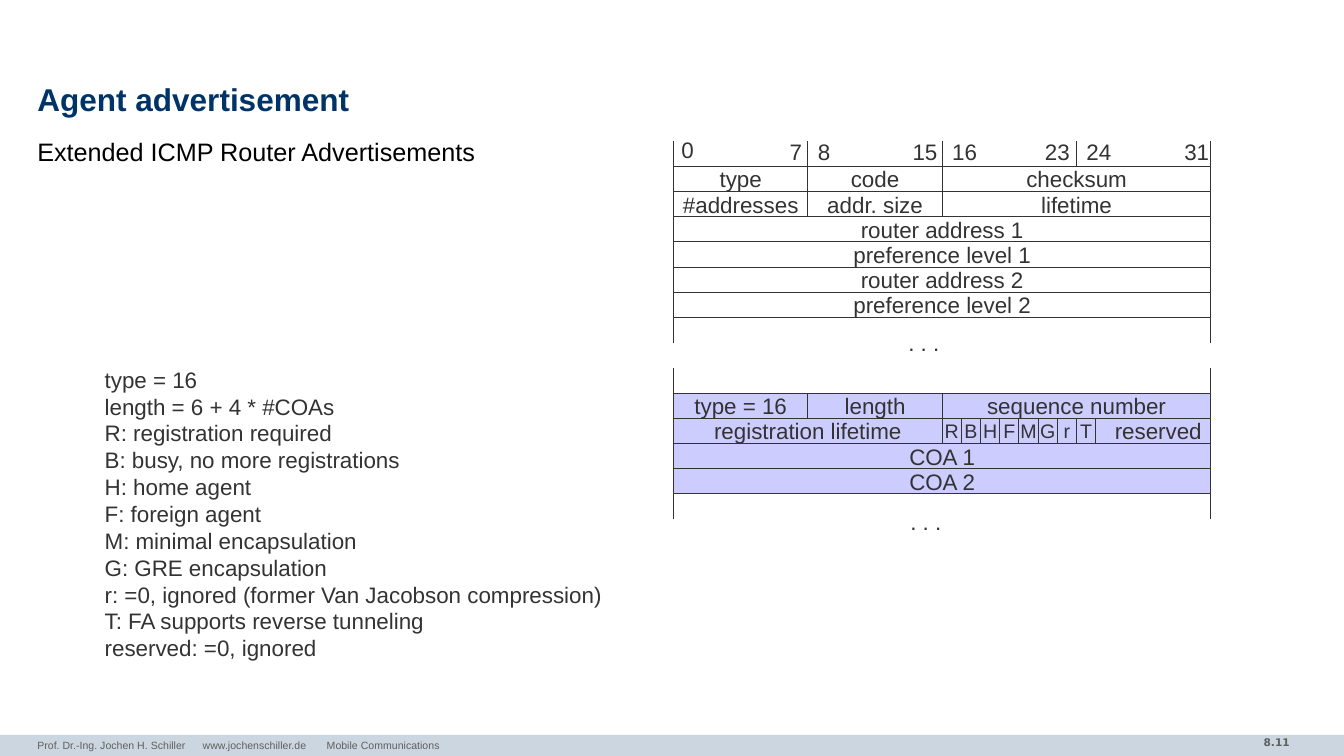
from lxml.etree import SubElement
from pptx import Presentation
from pptx.dml.color import RGBColor
from pptx.enum.shapes import MSO_CONNECTOR, MSO_SHAPE
from pptx.enum.text import MSO_ANCHOR, PP_ALIGN
from pptx.oxml.ns import qn
from pptx.util import Inches, Pt

WIDTH, HEIGHT = 13.33, 7.5
NAVY = RGBColor(0x00, 0x33, 0x66)
BLACK = RGBColor(0x00, 0x00, 0x00)
INK = RGBColor(0x33, 0x33, 0x33)
GRAY = RGBColor(0x5F, 0x5F, 0x5F)
BAND = RGBColor(0xCC, 0xD6, 0xE0)
WHITE = RGBColor(0xFF, 0xFF, 0xFF)
LILAC = RGBColor(0xCC, 0xCC, 0xFF)

TITLE = "Agent advertisement"
SUBTITLE = "Extended ICMP Router Advertisements"
FOOTER = "Prof. Dr.-Ing. Jochen H. Schiller\twww.jochenschiller.de\tMobile Communications"
FOOTER_TABS = (1.64, 2.87)
LEGEND = [
    "type = 16",
    "length = 6 + 4 * #COAs",
    "R: registration required",
    "B: busy, no more registrations",
    "H: home agent",
    "F: foreign agent",
    "M: minimal encapsulation",
    "G: GRE encapsulation",
    "r: =0, ignored (former Van Jacobson compression)",
    "T: FA supports reverse tunneling",
    "reserved: =0, ignored",
]

LEFT, TOP, BIT, ROW = 6.68, 1.4, 5.33 / 32, 0.25
FLAGS, FLAG_BITS, FLAG_ROW = "RBHFMGr", 8 / 7, 11
ROUTER_FIELDS = [
    (1, 0, 8, "type"), (1, 8, 8, "code"), (1, 16, 16, "checksum"),
    (2, 0, 8, "#addresses"), (2, 8, 8, "addr. size"), (2, 16, 16, "lifetime"),
    (3, 0, 32, "router address 1"),
    (4, 0, 32, "preference level 1"),
    (5, 0, 32, "router address 2"),
    (6, 0, 32, "preference level 2"),
]
AGENT_FIELDS = [
    (10, 0, 8, "type = 16"), (10, 8, 8, "length"), (10, 16, 16, "sequence number"),
    (FLAG_ROW, 0, 16, "registration lifetime"),
    (12, 0, 32, "COA 1"),
    (13, 0, 32, "COA 2"),
]
TICKS = {0: (0, 8, 16, 24, 32), 7: (0, 32), 9: (0, 32), 14: (0, 32)}
FIRST_BITS = [(0, -0.02, -0.1), (8, 0, -0.08), (16, 0, -0.08), (24, 0, -0.08)]
LAST_BITS = [(7, 0.04), (15, 0.05), (23, 0.03), (31, 0.08)]
DOTS = [(8.91, 3.22), (8.93, 4.99)]


def column(bit):
    return LEFT + bit * BIT


def line_top(row):
    return TOP + row * ROW


def write(box, text, size=16, color=INK, font="Arial", bold=False, align=PP_ALIGN.LEFT,
          anchor=MSO_ANCHOR.TOP, wrap=False, insets=(0.1, 0.05, 0.1, 0.05), spacing=None, tabs=()):
    frame = box.text_frame
    frame.word_wrap = wrap
    frame.vertical_anchor = anchor
    frame.margin_left, frame.margin_top, frame.margin_right, frame.margin_bottom = map(Inches, insets)
    for index, line in enumerate(text.split("\n")):
        para = frame.add_paragraph() if index else frame.paragraphs[0]
        para.alignment = align
        if spacing:
            para.line_spacing = spacing
        if tabs:
            stops = SubElement(para._p.get_or_add_pPr(), qn("a:tabLst"))
            for stop in tabs:
                SubElement(stops, qn("a:tab"), pos=str(Inches(stop)), algn="l")
        span = para.add_run()
        span.text = line
        span.font.size, span.font.bold, span.font.name = Pt(size), bold, font
        span.font.color.rgb = color


def add_label(page, place, text, **style):
    write(page.shapes.add_textbox(*map(Inches, place)), text, **style)


def add_block(page, place, fill):
    block = page.shapes.add_shape(MSO_SHAPE.RECTANGLE, *map(Inches, place))
    block.shadow.inherit = False
    block.fill.solid()
    block.fill.fore_color.rgb = fill
    block.line.fill.background()
    return block


def add_field(page, row, bit, bits, text, fill, **style):
    block = add_block(page, (column(bit), line_top(row), bits * BIT, ROW), fill)
    block.line.color.rgb = INK
    block.line.width = Pt(0.75)
    write(block, text, align=PP_ALIGN.CENTER, anchor=MSO_ANCHOR.MIDDLE, **style)


def add_tick(page, row, bit):
    x = Inches(column(bit))
    tick = page.shapes.add_connector(MSO_CONNECTOR.STRAIGHT, x, Inches(line_top(row)),
                                     x, Inches(line_top(row + 1)))
    tick.line.color.rgb = INK
    tick.line.width = Pt(0.75)
    SubElement(tick._element.spPr, qn("a:effectLst"))


def add_page_frame(page):
    add_block(page, (0, 7.29, WIDTH, 0.21), BAND)
    add_label(page, (11.1, 7.25, 1.79, 0.26), "8.11", size=7.5, color=GRAY,
              font="DejaVu Sans", bold=True, align=PP_ALIGN.RIGHT, wrap=True)
    add_label(page, (0.37, 0.78, 12.6, 0.47), TITLE, size=22.5, color=NAVY, bold=True,
              anchor=MSO_ANCHOR.MIDDLE, wrap=True, insets=(0, 0, 0, 0), spacing=0.85)
    add_label(page, (0.37, 1.35, 12.6, 5.74), SUBTITLE, size=18, color=BLACK,
              wrap=True, insets=(0, 0, 0, 0), spacing=1.02)
    add_label(page, (0.37, 7.28, 8.72, 0.22), FOOTER, size=7.5, color=GRAY,
              wrap=True, insets=(0, 0.05, 0, 0.05), tabs=FOOTER_TABS)
    add_label(page, (0.94, 3.58, 5.16, 3.04), "\n".join(LEGEND))


def add_packet(page):
    for fields, fill in ((ROUTER_FIELDS, WHITE), (AGENT_FIELDS, LILAC)):
        for row, bit, bits, text in fields:
            add_field(page, row, bit, bits, text, fill)
    for index, flag in enumerate(FLAGS):
        add_field(page, FLAG_ROW, 16 + index * FLAG_BITS, FLAG_BITS, flag, LILAC, size=14)
    add_field(page, FLAG_ROW, 25, 7, "reserved", LILAC, insets=(0.22, 0.05, 0.1, 0.05))
    add_field(page, FLAG_ROW, 24, FLAG_BITS, "T", LILAC, size=14)
    for row, bits in TICKS.items():
        for bit in bits:
            add_tick(page, row, bit)
    for bit, right, down in FIRST_BITS:
        add_label(page, (column(bit) + right, TOP + down, 0.45, 0.37), str(bit), wrap=True)
    for bit, right in LAST_BITS:
        add_label(page, (column(bit + 1) + right - 0.45, TOP - 0.08, 0.45, 0.37), str(bit),
                  align=PP_ALIGN.RIGHT, wrap=True)
    for x, y in DOTS:
        add_label(page, (x, y, 0.58, 0.37), ". . .")


def main():
    deck = Presentation()
    deck.slide_width, deck.slide_height = Inches(WIDTH), Inches(HEIGHT)
    page = deck.slides.add_slide(deck.slide_layouts[6])
    add_page_frame(page)
    add_packet(page)
    deck.save("out.pptx")


if __name__ == "__main__":
    main()
